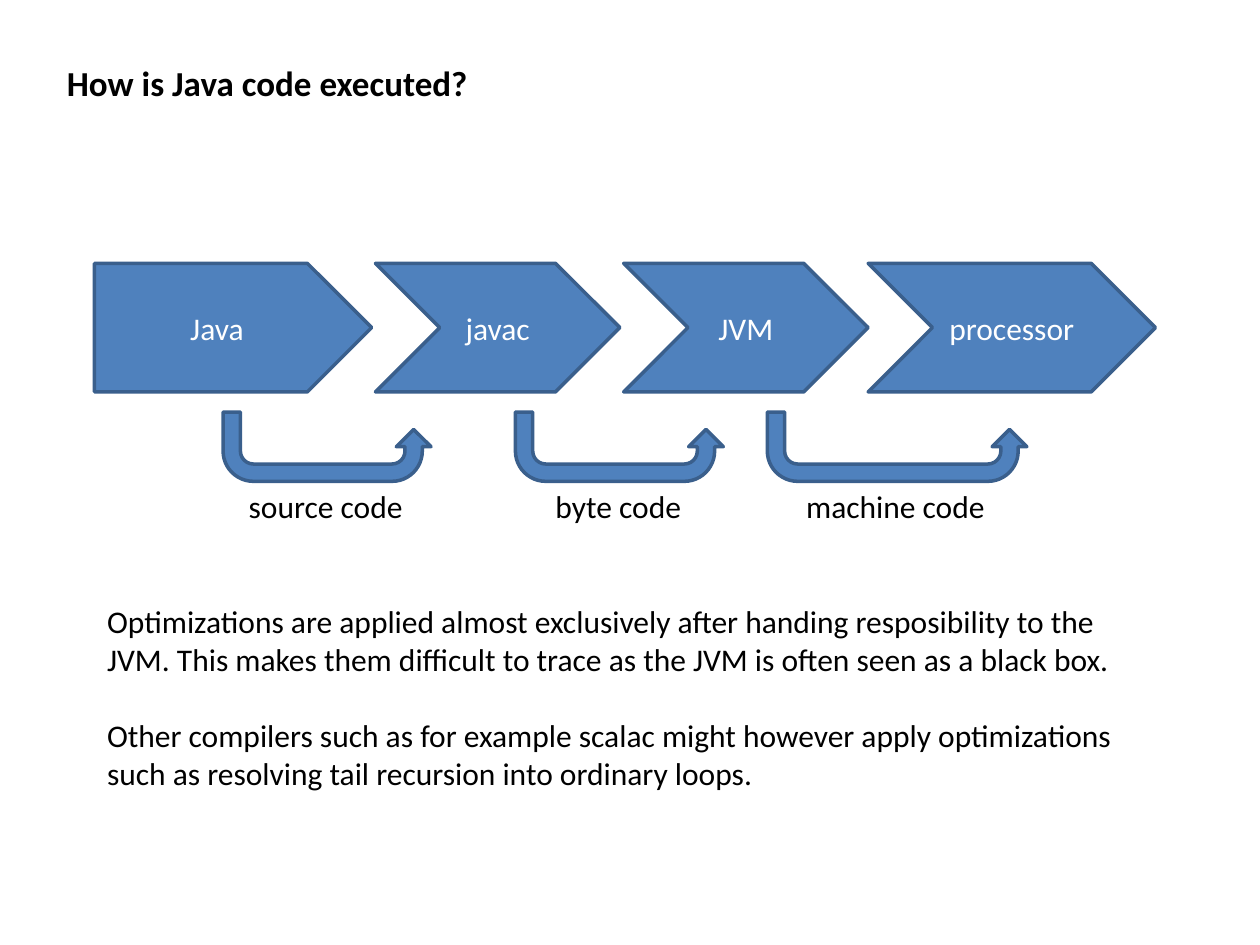
from dataclasses import dataclass

from lxml import etree
from pptx import Presentation
from pptx import util as u
from pptx.dml.color import RGBColor
from pptx.enum import shapes, text
from pptx.oxml.ns import qn


@dataclass(frozen=True)
class Theme:
    """Colours, typeface and sizes of the deck."""
    font: str = "Calibri"
    ink: str = "000000"
    light: str = "FFFFFF"
    fill: str = "4F81BD"
    outline: str = "3A5F8C"
    title_size: int = 20
    text_size: int = 18
    line_width: int = 2


class Painter:
    """Draws styled elements on the current slide."""

    def __init__(self, page, theme):
        self.page = page
        self.theme = theme

    def place(self, box, at):
        for name, value in zip(("left", "top", "width", "height"), at):
            setattr(box, name, u.Inches(value))

    def set_text(self, box, paras, size, color, align, anchor, wrap, gap=0, bold=False):
        frame = box.text_frame
        frame.text = "\n".join(paras)
        frame.word_wrap = wrap
        frame.vertical_anchor = anchor
        layout = {"alignment": align, "space_before": u.Pt(0), "space_after": u.Pt(gap)}
        style = {"name": self.theme.font, "size": u.Pt(size), "bold": bold}
        for para in frame.paragraphs:
            for name, value in layout.items():
                setattr(para, name, value)
            for span in para.runs:
                for name, value in style.items():
                    setattr(span.font, name, value)
                span.font.color.rgb = RGBColor.from_string(color)

    def plain_text(self, box, at, paras, size, **options):
        self.place(box, at)
        self.set_text(box, paras, size, self.theme.ink, text.PP_ALIGN.LEFT,
                      text.MSO_ANCHOR.TOP, False, **options)
        box.text_frame.auto_size = text.MSO_AUTO_SIZE.SHAPE_TO_FIT_TEXT

    def title(self, at, words):
        self.plain_text(self.page.shapes.title, at, [words], self.theme.title_size, bold=True)

    def body(self, at, paras, gap):
        box = self.page.placeholders[1]
        self.plain_text(box, at, paras, self.theme.text_size, gap=gap)
        for para in box.text_frame.paragraphs:
            properties = para._p.get_or_add_pPr()
            properties.set("marL", "0")
            properties.set("indent", "0")
            etree.SubElement(properties, qn("a:buNone"))

    def label(self, at, words):
        box = self.page.shapes.add_textbox(0, 0, 0, 0)
        self.plain_text(box, at, [words], self.theme.text_size)

    def shape(self, kind, at):
        box = self.page.shapes.add_shape(kind, *map(u.Inches, at))
        box.shadow.inherit = False
        box.fill.solid()
        box.fill.fore_color.rgb = RGBColor.from_string(self.theme.fill)
        box.line.color.rgb = RGBColor.from_string(self.theme.outline)
        box.line.width = u.Pt(self.theme.line_width)
        return box

    def stage(self, kind, at, words):
        self.set_text(self.shape(kind, at), [words], self.theme.text_size, self.theme.light,
                      text.PP_ALIGN.CENTER, text.MSO_ANCHOR.MIDDLE, True)

    def handover(self, at):
        arrow = self.shape(shapes.MSO_SHAPE.U_TURN_ARROW, at)
        arrow.rotation = 180
        arrow._element.spPr.xfrm.set("flipH", "1")


def main():
    deck = Presentation()
    deck.slide_width, deck.slide_height = u.Inches(10), u.Inches(7.5)
    painter = Painter(deck.slides.add_slide(deck.slide_layouts[1]), Theme())

    painter.title((0.43, 0.44, 3.41, 0.44), "How is Java code executed?")

    pentagon, chevron = shapes.MSO_SHAPE.PENTAGON, shapes.MSO_SHAPE.CHEVRON
    stages = [
        (pentagon, 0.75, 2.2, "Java"),
        (chevron, 2.98, 1.94, "javac"),
        (chevron, 4.95, 1.94, "JVM"),
        (chevron, 6.89, 2.28, "processor"),
    ]
    for kind, left, width, words in stages:
        painter.stage(kind, (left, 2.09, width, 1.02), words)

    handovers = [
        (1.77, 1.65, 1.44, "source code"),
        (4.09, 1.65, 1.21, "byte code"),
        (6.09, 2.06, 1.64, "machine code"),
    ]
    for left, width, label_width, words in handovers:
        painter.handover((left, 3.27, width, 0.55))
        label_left = left + (width - label_width) / 2
        painter.label((label_left, 3.82, label_width, 0.4), words)

    painter.body((0.75, 4.73, 8.33, 1.62), [
        "Optimizations are applied almost exclusively after handing resposibility to the\v"
        "JVM. This makes them difficult to trace as the JVM is often seen as a black box.",
        "Other compilers such as for example scalac might however apply optimizations\v"
        "such as resolving tail recursion into ordinary loops.",
    ], gap=22)

    deck.save("out.pptx")


if __name__ == "__main__":
    main()
